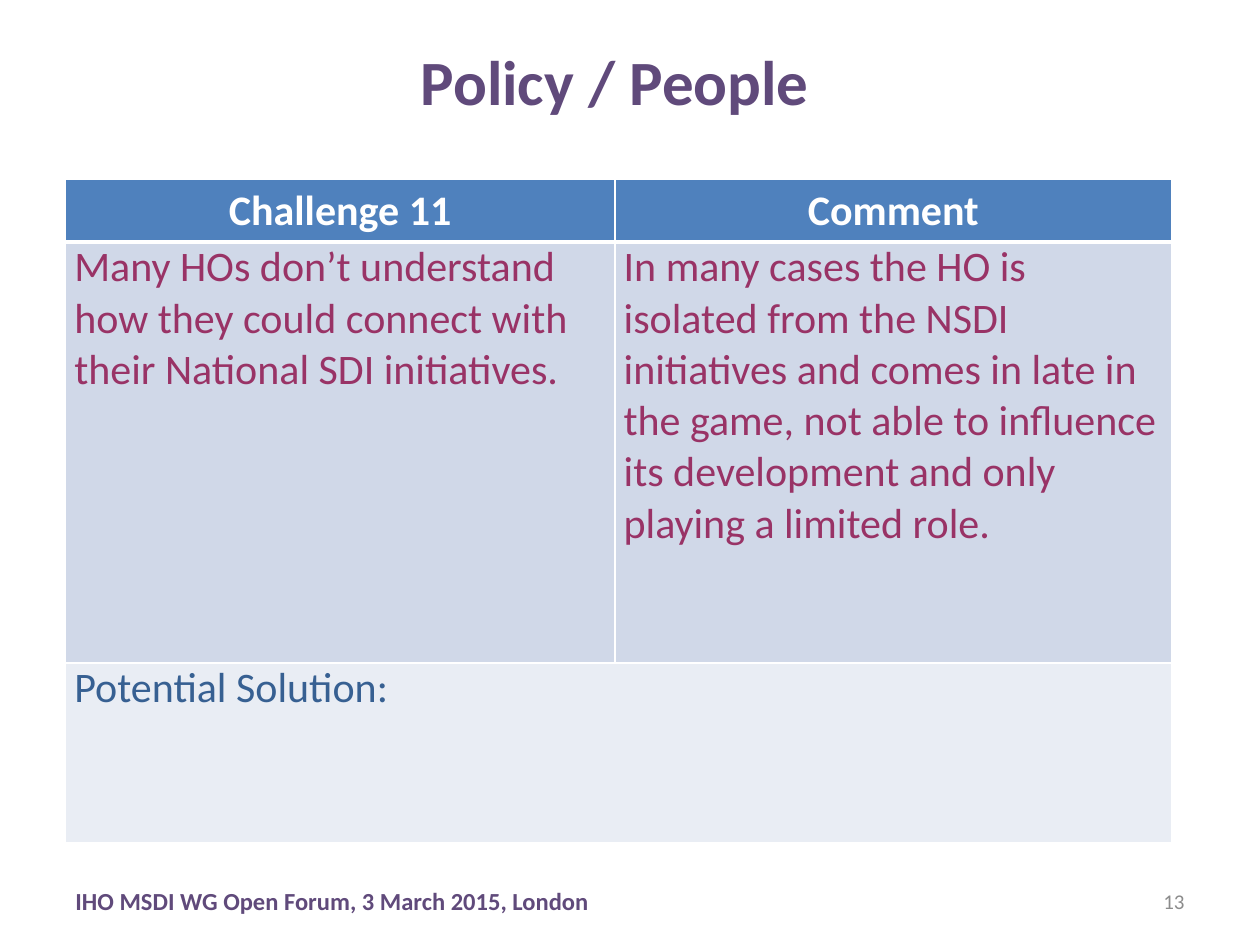
from lxml import etree
from pptx import Presentation
from pptx.dml.color import RGBColor
from pptx.enum import text
from pptx.oxml import ns
from pptx.util import Inches, Pt

PURPLE = RGBColor(0x60, 0x4A, 0x7B)
GREY = RGBColor(0x8C, 0x8C, 0x8C)
WHITE = RGBColor(0xFF, 0xFF, 0xFF)
PLUM = RGBColor(0x99, 0x33, 0x66)
BLUE = RGBColor(0x37, 0x60, 0x92)
HEADER_FILL = RGBColor(0x4F, 0x81, 0xBD)
BODY_FILL = RGBColor(0xD0, 0xD8, 0xE8)
SOLUTION_FILL = RGBColor(0xE9, 0xED, 0xF4)

LEFT, CENTER, RIGHT = text.PP_ALIGN.LEFT, text.PP_ALIGN.CENTER, text.PP_ALIGN.RIGHT
COLUMNS = (4.36, 4.42)
ROWS = (0.46, 3.34, 1.43)
CELLS = (
    ("Challenge 11", "Comment"),
    ("Many HOs don’t understand how they could connect with their "
     "National SDI initiatives.",
     "In many cases the HO is isolated from the NSDI initiatives and comes in late "
     "in the game, not able to influence its development and only playing a limited role."),
    ("Potential Solution:", ""),
)
ROW_STYLES = ((HEADER_FILL, WHITE), (BODY_FILL, PLUM), (SOLUTION_FILL, BLUE))


def write(tf, words, size, color, bold=False, align=LEFT):
    """Put one styled paragraph into a text frame."""
    p = tf.paragraphs[0]
    p.text = words
    p.alignment = align
    p.font.name = "Calibri"
    p.font.size = Pt(size)
    p.font.bold = bold
    p.font.color.rgb = color


def add_label(s, box, words, size, color, bold=False, align=LEFT):
    """Add a vertically centred text box."""
    tf = s.shapes.add_textbox(*map(Inches, box)).text_frame
    tf.word_wrap = True
    tf.vertical_anchor = text.MSO_ANCHOR.MIDDLE
    write(tf, words, size, color, bold, align)


def set_borders(cell, bottom=1):
    """Draw white cell borders, with a chosen bottom width in points."""
    tc_pr = cell._tc.get_or_add_tcPr()
    for i, (side, width) in enumerate(zip("LRTB", (1, 1, 1, bottom))):
        ln = etree.Element(ns.qn(f"a:ln{side}"), w=str(Pt(width)))
        fill = etree.SubElement(ln, ns.qn("a:solidFill"))
        etree.SubElement(fill, ns.qn("a:srgbClr"), val=str(WHITE))
        tc_pr.insert(i, ln)


def add_challenge_table(s):
    """Add the challenge, comment and solution table."""
    table = s.shapes.add_table(len(ROWS), len(COLUMNS), Inches(0.52), Inches(1.42),
                               Inches(sum(COLUMNS)), Inches(sum(ROWS))).table
    for column, width in zip(table.columns, COLUMNS):
        column.width = Inches(width)
    for row, height in zip(table.rows, ROWS):
        row.height = Inches(height)
    table.cell(2, 0).merge(table.cell(2, 1))
    for i, (row, (fill, color)) in enumerate(zip(CELLS, ROW_STYLES)):
        header = i == 0
        for j, words in enumerate(row):
            cell = table.cell(i, j)
            cell.fill.solid()
            cell.fill.fore_color.rgb = fill
            set_borders(cell, 3 if header else 1)
            if not header:
                cell.margin_left = cell.margin_right = Inches(0.07)
                cell.margin_top = cell.margin_bottom = 0
            if words:
                write(cell.text_frame, words, 24, color, header, CENTER if header else LEFT)


def main():
    """Build and save the slide."""
    prs = Presentation()
    prs.slide_width, prs.slide_height = Inches(10), Inches(7.5)
    s = prs.slides.add_slide(prs.slide_layouts[6])
    add_label(s, (0.5, 6.95, 6.08, 0.4), "IHO MSDI WG Open Forum, 3 March 2015, London",
              14, PURPLE, bold=True)
    add_label(s, (7.17, 6.95, 2.33, 0.4), "13", 12, GREY, align=RIGHT)
    add_challenge_table(s)
    add_label(s, (2.53, 0.09, 4.7, 1.09), "Policy / People", 36, PURPLE,
              bold=True, align=CENTER)
    prs.save("out.pptx")


if __name__ == "__main__":
    main()
